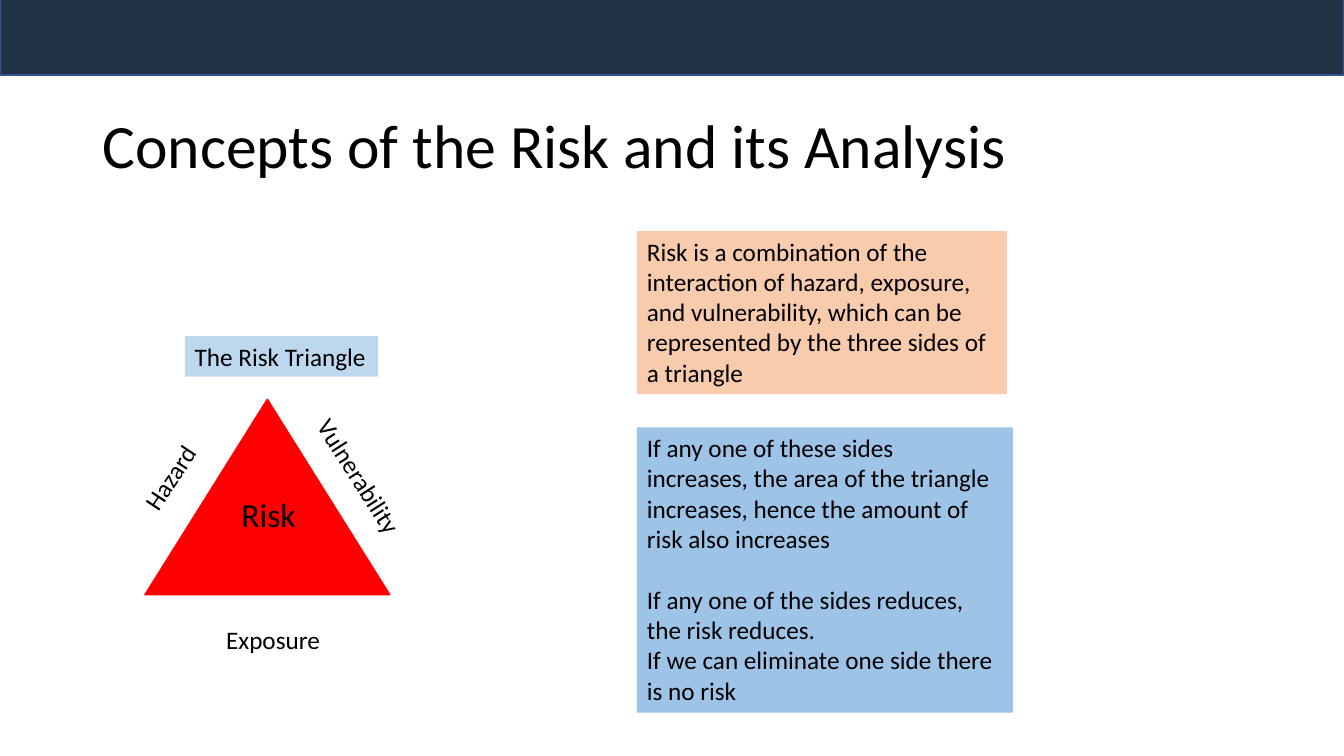
from pptx import Presentation
from pptx.dml.color import RGBColor
from pptx.enum.shapes import MSO_SHAPE
from pptx.enum.text import MSO_ANCHOR
from pptx.util import Pt

BLACK = RGBColor(0x00, 0x00, 0x00)
NAVY = RGBColor(0x22, 0x33, 0x46)
BAND_EDGE = RGBColor(0x32, 0x54, 0x91)
RED = RGBColor(0xFF, 0x00, 0x00)
PALE_BLUE = RGBColor(0xBD, 0xD7, 0xEE)
PEACH = RGBColor(0xF8, 0xCB, 0xAD)
SKY_BLUE = RGBColor(0x9D, 0xC3, 0xE6)

DEFINITION = [
    "Risk is a combination of the",
    "interaction of hazard, exposure,",
    "and vulnerability, which can be",
    "represented by the three sides of",
    "a triangle",
]
INCREASE = [
    "If any one of these sides",
    "increases, the area of the triangle",
    "increases, hence the amount of",
    "risk also increases",
]
REDUCTION = [
    "If any one of the sides reduces,",
    "the risk reduces.",
    "If we can eliminate one side there",
    "is no risk",
]


class RiskSlide:
    font_name = "Calibri"
    text_size = 18
    title_size = 44
    line_height = 22

    def __init__(self, deck):
        self.slide = deck.slides.add_slide(deck.slide_layouts[5])

    def format_runs(self, paragraph, size):
        for span in paragraph.runs:
            span.font.name = self.font_name
            span.font.size = Pt(size)
            span.font.color.rgb = BLACK

    def title(self, text, left, top, width, height):
        box = self.slide.shapes.title
        box.left, box.top, box.width, box.height = Pt(left), Pt(top), Pt(width), Pt(height)
        frame = box.text_frame
        frame.text = text
        frame.word_wrap = True
        frame.vertical_anchor = MSO_ANCHOR.MIDDLE
        para = frame.paragraphs[0]
        para.alignment = 1
        para.line_spacing = 0.9
        self.format_runs(para, self.title_size)

    def shape(self, kind, left, top, width, height, fill, edge):
        shape = self.slide.shapes.add_shape(kind, Pt(left), Pt(top), Pt(width), Pt(height))
        shape.shadow.inherit = False
        shape.fill.solid()
        shape.fill.fore_color.rgb = fill
        shape.line.color.rgb = edge
        shape.line.width = Pt(1)

    def text(self, blocks, left, top, width, height, fill=None, size=text_size, rotation=0):
        """Add a text box; each block of lines is set apart by one line height."""
        box = self.slide.shapes.add_textbox(Pt(left), Pt(top), Pt(width), Pt(height))
        box.rotation = rotation
        if fill is not None:
            box.fill.solid()
            box.fill.fore_color.rgb = fill
        frame = box.text_frame
        frame.word_wrap = False
        frame.text = "\n".join(line for block in blocks for line in block)
        for para in frame.paragraphs:
            self.format_runs(para, size)
        start = 0
        for block in blocks[:-1]:
            start += len(block)
            frame.paragraphs[start].space_before = Pt(self.line_height)

    def label(self, text, left, top, width, height=29, **style):
        self.text([[text]], left, top, width, height, **style)


def main():
    deck = Presentation()
    deck.slide_width, deck.slide_height = Pt(960), Pt(540)
    page = RiskSlide(deck)

    page.shape(MSO_SHAPE.RECTANGLE, 0, -2.5, 960, 56, NAVY, BAND_EDGE)
    page.title("Concepts of the Risk and its Analysis", 66, 54, 828, 104.4)

    page.shape(MSO_SHAPE.ISOSCELES_TRIANGLE, 103.5, 285.2, 175, 139.7, RED, RED)
    page.label("The Risk Triangle", 132, 240, 138, fill=PALE_BLUE)
    page.label("Risk", 165.4, 349.2, 54.7, 36, size=24)
    page.label("Vulnerability", 203, 326.2, 108, rotation=57.4)
    page.label("Hazard", 88.6, 326.2, 65.5, rotation=303.5)
    page.label("Exposure", 154.4, 442.6, 82)

    page.text([DEFINITION], 455, 165, 264.2, 116.6, fill=PEACH)
    page.text([INCREASE, REDUCTION], 455, 305.3, 268.6, 203.8, fill=SKY_BLUE)

    deck.save("out.pptx")


if __name__ == "__main__":
    main()
